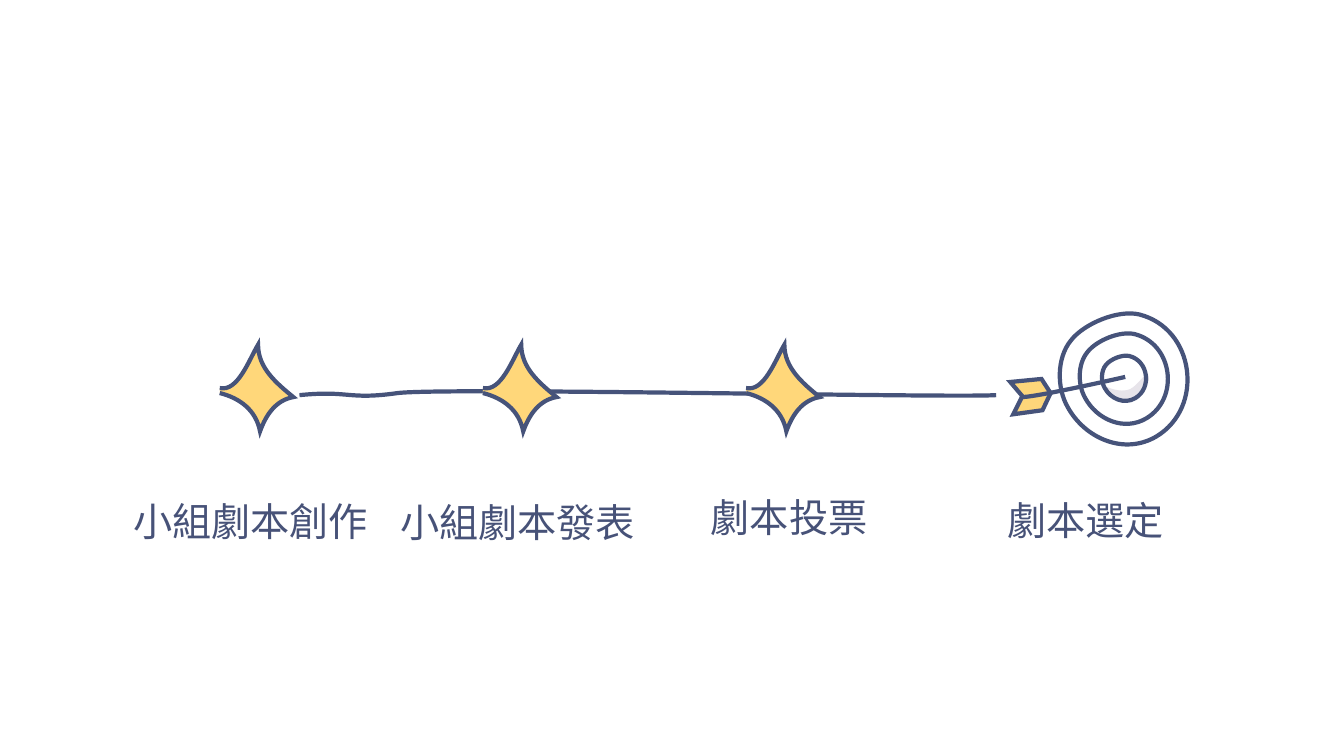
from math import cos, radians, sin

from lxml import etree
from pptx import Presentation
from pptx.dml.color import RGBColor
from pptx.enum.text import MSO_ANCHOR, MSO_AUTO_SIZE, PP_ALIGN
from pptx.oxml.ns import qn
from pptx.util import Inches, Pt

MIDDLE = MSO_ANCHOR.MIDDLE
GROW = MSO_AUTO_SIZE.SHAPE_TO_FIT_TEXT
LEFT = PP_ALIGN.LEFT
INK = RGBColor(0x46, 0x53, 0x7A)
LABEL_INK = RGBColor(0x47, 0x52, 0x78)
STAR_GOLD = RGBColor(0xFF, 0xD7, 0x7A)
FEATHER_GOLD = RGBColor(0xFD, 0xD6, 0x7A)
SHADE = RGBColor(0xE7, 0xE4, 0xEA)
FONT = "Noto Sans CJK SC"
CURVE_STEPS = 12
ROUTE_TURN, TARGET_TURN = 105, 34.8

ROUTE = [(0, 0.07), (0.5, 0.02), (0.47, 0.12), (0.97, 0.05),
         (1.43, -0.01), (6.46, 0.1), (6.91, 0.07)]
STAR = [(0, 0.43), (0.18, 0.47), (0.29, 0.15), (0.38, 0),
        (0.38, 0.23), (0.56, 0.38), (0.73, 0.52),
        (0.56, 0.55), (0.46, 0.69), (0.4, 0.86),
        (0.36, 0.65), (0.2, 0.53), (0, 0.48)]
RING = [(-0.56, 0.29), (-0.39, 0.6), (0, 0.77), (0.32, 0.58),
        (0.8, 0.29), (0.7, -0.49), (0.15, -0.63),
        (-0.06, -0.68), (-0.4, -0.54), (-0.53, -0.37),
        (-0.67, -0.2), (-0.67, 0.1), (-0.56, 0.29)]
RING_SCALES = (1, 0.69, 0.345)
BULLSEYE_SHADE = [(-0.18, 0.1), (-0.18, 0.15), (-0.09, 0.2), (-0.06, 0.22),
                  (0, 0.24), (0.07, 0.23), (0.12, 0.2),
                  (0.19, 0.16), (0.28, 0.03), (0.23, -0.05),
                  (0.17, 0), (0.13, 0.07), (0.06, 0.11),
                  (-0.01, 0.14), (-0.1, 0.12), (-0.17, 0.09)]
FEATHERS = [(-1.01, 0.18), (-1.13, 0.04), (-0.82, 0.01),
            (-0.73, 0.15), (-0.81, 0.32), (-1.1, 0.36)]
SHAFT = [(0.01, -0.01), (0.01, -0.01), (-0.82, 0.18), (-1.01, 0.19)]

STAR_LEFT, STAR_TOP, STAR_STEP, STAR_COUNT = 2.18, 3.42, 2.61, 3
LABELS = [
    ("小組劇本創作", 1.28, 4.8, 2.52),
    ("小組劇本發表", 3.93, 4.81, 2.5),
    ("劇本投票", 7.01, 4.76, 1.85),
    ("劇本選定", 9.95, 4.79, 1.85),
]


def rotate(point, degrees):
    """Turn a point clockwise about the origin."""
    x, y = point
    c, s = cos(radians(degrees)), sin(radians(degrees))
    return x * c - y * s, x * s + y * c


def flatten(controls):
    """Turn a chain of cubic Bezier controls into points along the curve."""
    points = [controls[0]]
    for first in range(0, len(controls) - 1, 3):
        segment = controls[first:first + 4]
        for step in range(1, CURVE_STEPS + 1):
            t = step / CURVE_STEPS
            weights = ((1 - t) ** 3, 3 * t * (1 - t) ** 2, 3 * t * t * (1 - t), t ** 3)
            points.append(tuple(sum(w * p[axis] for w, p in zip(weights, segment))
                                for axis in (0, 1)))
    return points


def bend(outline, controls):
    """Replace the straight segments of an outline by cubic curves."""
    trace = outline._element.find(".//" + qn("a:path"))
    for straight in trace.findall(qn("a:lnTo")):
        trace.remove(straight)
    for first in range(1, len(controls), 3):
        curve = etree.Element(qn("a:cubicBezTo"))
        for x, y in controls[first:first + 3]:
            etree.SubElement(curve, qn("a:pt"), x=str(x - outline.left), y=str(y - outline.top))
        trace.insert(1 + first // 3, curve)


def draw_outline(shapes, left, top, points, curved=True, closed=False,
                 fill=None, line=INK, scale=1, turn=0):
    """Draw an outline measured from left and top, in a frame turned clockwise."""
    def place(chain):
        return [(Inches(left + x), Inches(top + y)) for x, y in chain]

    upright = [rotate((x * scale, y * scale), -turn) for x, y in points]
    placed = place(flatten(upright) if curved else upright)
    builder = shapes.build_freeform(*placed[0])
    builder.add_line_segments(placed[1:], close=closed)
    outline = builder.convert_to_shape()
    if curved:
        bend(outline, place(upright))
    middle_x = outline.left + outline.width / 2 - Inches(left)
    middle_y = outline.top + outline.height / 2 - Inches(top)
    turned_x, turned_y = rotate((middle_x, middle_y), turn)
    outline.left += round(turned_x - middle_x)
    outline.top += round(turned_y - middle_y)
    outline.rotation = turn
    outline.shadow.inherit = False
    if fill is None:
        outline.fill.background()
    else:
        outline.fill.solid()
        outline.fill.fore_color.rgb = fill
    if line is None:
        outline.line.fill.background()
    else:
        outline.line.color.rgb = line
        outline.line.width = Pt(3)
        stroke = outline._element.spPr.find(qn("a:ln"))
        etree.SubElement(stroke, qn("a:miter"), lim="800000")


def draw_target(slide, center_x, center_y):
    """Draw the target and its arrow around a centre point."""
    target = slide.shapes.add_group_shape().shapes
    parts = [(BULLSEYE_SHADE, {"closed": True, "fill": SHADE, "line": None})]
    parts += [(RING, {"closed": True, "scale": scale}) for scale in RING_SCALES]
    parts += [(FEATHERS, {"closed": True, "curved": False, "fill": FEATHER_GOLD}),
              (SHAFT, {})]
    for points, part_format in parts:
        draw_outline(target, center_x, center_y, points, turn=TARGET_TURN, **part_format)


def draw_stars(slide, left, top):
    """Draw the evenly spaced milestone stars."""
    for index in range(STAR_COUNT):
        draw_outline(slide.shapes, left + index * STAR_STEP, top, STAR, fill=STAR_GOLD)


def add_label(slide, wording, left, top, width, height=0.65):
    """Add the name of one stage in the given box."""
    label = slide.shapes.add_textbox(*map(Inches, (left, top, width, height)))
    frame = label.text_frame
    margin = Inches(0.04)
    frame_format = {"word_wrap": True, "auto_size": GROW, "vertical_anchor": MIDDLE,
                    "margin_left": margin, "margin_right": margin,
                    "margin_top": margin, "margin_bottom": margin}
    for name, value in frame_format.items():
        setattr(frame, name, value)
    stage = frame.paragraphs[0]
    stage.alignment = LEFT
    stage.line_spacing = 1.2
    run = stage.add_run()
    run.text = wording
    for name, value in {"size": Pt(28), "name": FONT}.items():
        setattr(run.font, name, value)
    run.font.color.rgb = LABEL_INK
    etree.SubElement(run.font._element, qn("a:ea"), typeface=FONT)


def build_timeline(slide):
    """Place the route, target, stars and stage names."""
    draw_outline(slide.shapes, 2.97, 3.85, ROUTE, turn=ROUTE_TURN)
    draw_target(slide, 11.15, 3.75)
    draw_stars(slide, STAR_LEFT, STAR_TOP)
    for label in LABELS:
        add_label(slide, *label)


def main():
    """Build and save the presentation."""
    presentation = Presentation()
    presentation.slide_width = Inches(13.33)
    presentation.slide_height = Inches(7.5)
    build_timeline(presentation.slides.add_slide(presentation.slide_layouts[6]))
    presentation.save("out.pptx")


if __name__ == "__main__":
    main()
